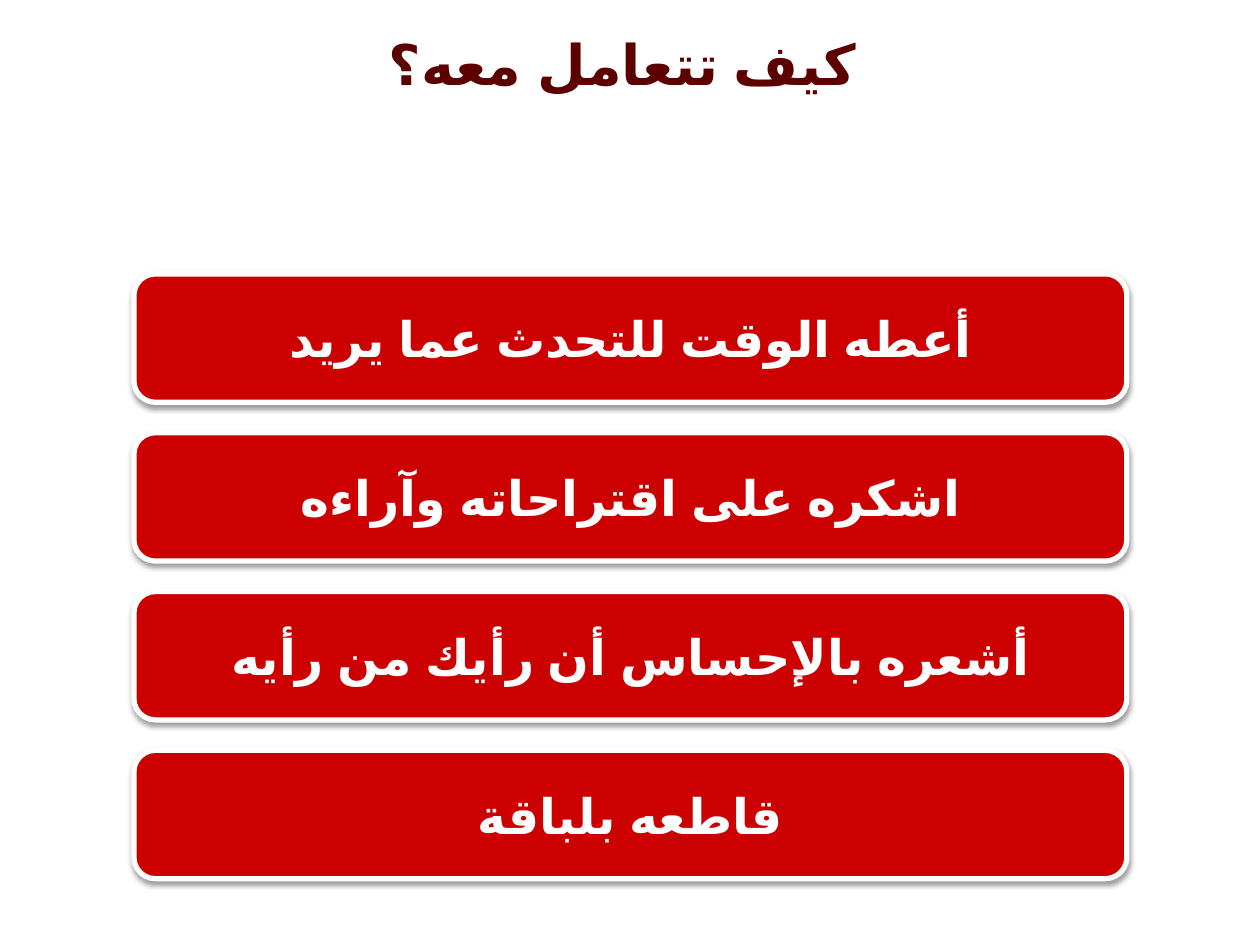
from pptx import Presentation
from pptx.dml.color import RGBColor
from pptx.enum.shapes import MSO_SHAPE as Shape
from pptx.enum.text import MSO_ANCHOR as Anchor, PP_ALIGN as Align
from pptx.oxml import parse_xml
from pptx.oxml.ns import qn
from pptx.util import Pt

MAROON = RGBColor(0x5C, 0x00, 0x00)
RED = RGBColor(0xCC, 0x00, 0x00)
WHITE = RGBColor(0xFF, 0xFF, 0xFF)

SHADOW = (
    '<a:outerShdw xmlns:a="http://schemas.openxmlformats.org/drawingml/2006/main"'
    f' blurRad="{Pt(3.1)}" dist="{Pt(1.6)}" dir="5400000" rotWithShape="0">'
    '<a:srgbClr val="000000"><a:alpha val="38000"/></a:srgbClr></a:outerShdw>'
)


def write(shape, text, size, face, color):
    """Put one centred right-to-left line of bold text in a shape."""
    frame = shape.text_frame
    frame.word_wrap = True
    frame.vertical_anchor = Anchor.MIDDLE
    para = frame.paragraphs[0]
    para.alignment = Align.CENTER
    para._p.get_or_add_pPr().set("rtl", "1")
    run = para.add_run()
    run.text = text
    font = run.font
    font.size = Pt(size)
    font.bold = True
    font.name = face
    font.color.rgb = color
    run._r.get_or_add_rPr().set("lang", "ar-SA")


deck = Presentation()
deck.slide_width, deck.slide_height = Pt(720), Pt(540)
slide = deck.slides.add_slide(deck.slide_layouts[6])

# Title
title = slide.shapes.add_textbox(Pt(0), Pt(3.6), Pt(711.4), Pt(64.8))
write(title, "كيف تتعامل معه؟", 32, "Calibri", MAROON)

# Stack of advice bars
LEFT, TOP, WIDTH, HEIGHT, STEP = 76.5, 156.5, 567.4, 73.4, 90.75
tips = [
    "أعطه الوقت للتحدث عما يريد",
    "اشكره على اقتراحاته وآراءه",
    "أشعره بالإحساس أن رأيك من رأيه",
    "قاطعه بلباقة",
]
for row, tip in enumerate(tips):
    bar = slide.shapes.add_shape(
        Shape.ROUNDED_RECTANGLE,
        Pt(LEFT), Pt(TOP + row * STEP), Pt(WIDTH), Pt(HEIGHT))
    bar.adjustments[0] = 0.167
    bar.fill.solid()
    bar.fill.fore_color.rgb = RED
    bar.line.color.rgb = WHITE
    bar.line.width = Pt(3)
    # Soft shadow straight below
    bar.shadow.inherit = False
    bar._element.spPr.find(qn("a:effectLst")).append(parse_xml(SHADOW))
    write(bar, tip, 28, "Courier New", WHITE)

deck.save("out.pptx")
